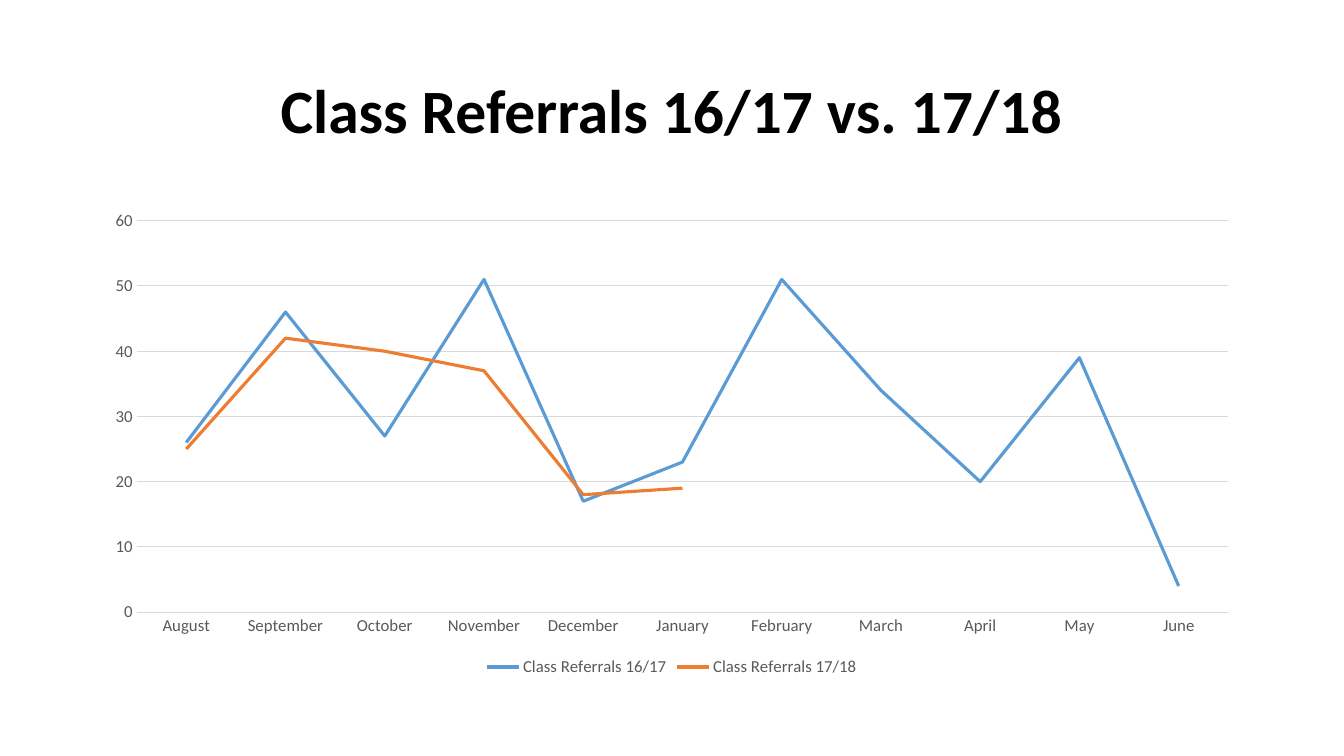
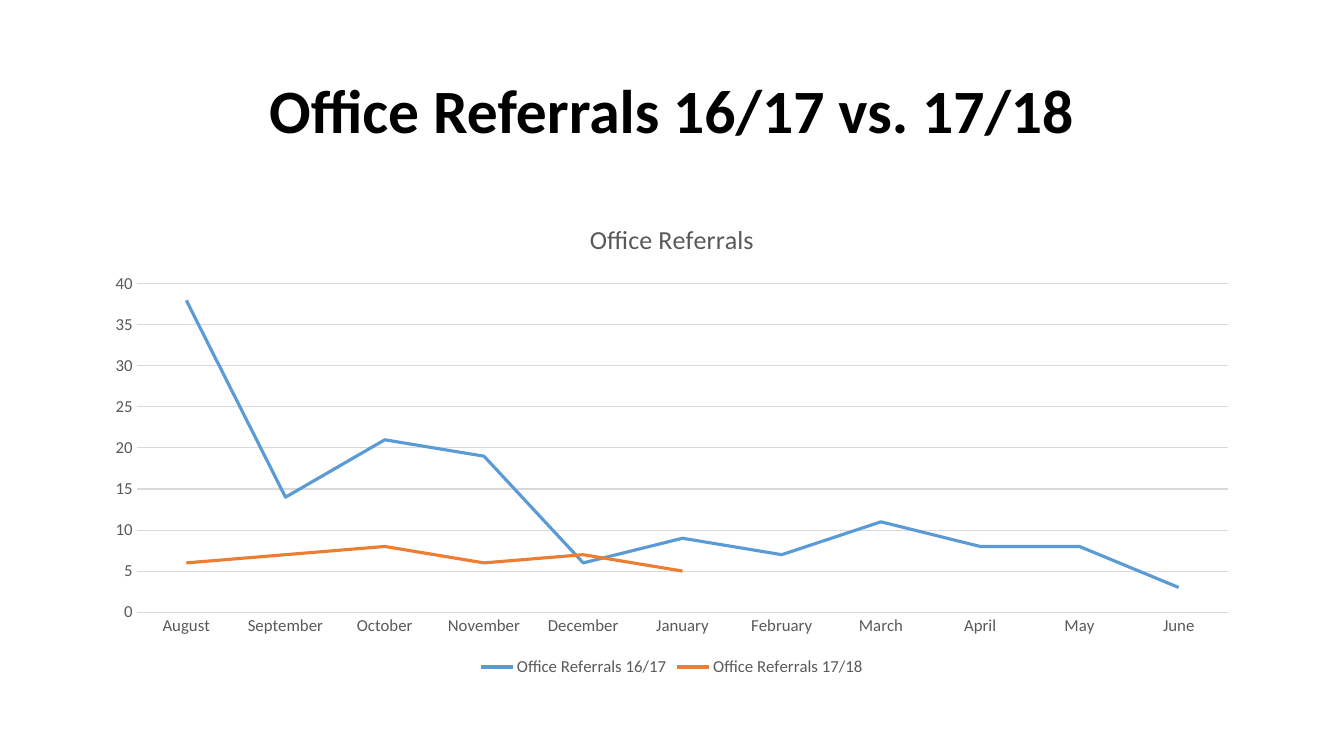
from pptx import Presentation
from pptx.chart.data import CategoryChartData
from pptx.dml.color import RGBColor
from pptx.enum.chart import XL_CHART_TYPE, XL_LEGEND_POSITION, XL_TICK_MARK
from pptx.enum.text import MSO_ANCHOR, PP_ALIGN
from pptx.util import Cm, Pt

FONT = "Calibri"
BLACK = RGBColor(0x00, 0x00, 0x00)
GRAY = RGBColor(0x59, 0x59, 0x59)
LIGHT_GRAY = RGBColor(0xD9, 0xD9, 0xD9)
BLUE = RGBColor(0x5B, 0x9B, 0xD5)
ORANGE = RGBColor(0xED, 0x7D, 0x31)

# Shared column for title and chart
LEFT, WIDTH = Cm(2.33), Cm(29.21)

MONTHS = ["August", "September", "October", "November", "December", "January",
          "February", "March", "April", "May", "June"]
CLASS_REFERRALS = {
    "16/17": [26, 46, 27, 51, 17, 23, 51, 34, 20, 39, 4],
    "17/18": [25, 42, 40, 37, 18, 19],
}
OFFICE_REFERRALS = {
    "16/17": [38, 14, 21, 19, 6, 9, 7, 11, 8, 8, 3],
    "17/18": [6, 7, 8, 6, 7, 5],
}


def format_font(font, size, color=GRAY, bold=False):
    font.name = FONT
    font.size = Pt(size)
    font.bold = bold
    font.color.rgb = color


def write_text(frame, text, align=PP_ALIGN.CENTER, line_spacing=None, **font_format):
    para = frame.paragraphs[0]
    para.alignment = align
    para.line_spacing = line_spacing
    span = para.add_run()
    span.text = text
    format_font(span.font, **font_format)


def add_title(page, text):
    box = page.shapes.add_textbox(LEFT, Cm(1.01), WIDTH, Cm(3.68))
    frame = box.text_frame
    frame.word_wrap = True
    frame.vertical_anchor = MSO_ANCHOR.MIDDLE
    write_text(frame, text, line_spacing=0.9, size=44, color=BLACK, bold=True)


def format_line(line, color, width):
    line.color.rgb = color
    line.width = Pt(width)


def format_axes(chart):
    for axis in (chart.category_axis, chart.value_axis):
        axis.major_tick_mark = XL_TICK_MARK.NONE
        axis.minor_tick_mark = XL_TICK_MARK.NONE
        format_font(axis.tick_labels.font, 12)
    format_line(chart.category_axis.format.line, LIGHT_GRAY, 0.75)
    chart.value_axis.format.line.fill.background()
    format_line(chart.value_axis.major_gridlines.format.line, LIGHT_GRAY, 0.75)


def add_line_chart(page, subject, values_by_year, top_value, step, title=None):
    data = CategoryChartData()
    data.categories = MONTHS
    for year, values in values_by_year.items():
        missing = [None] * (len(MONTHS) - len(values))
        data.add_series(f"{subject} {year}", values + missing)
    chart = page.shapes.add_chart(
        XL_CHART_TYPE.LINE, LEFT, Cm(5.07), WIDTH, Cm(12.09), data).chart
    format_font(chart.font, 10, BLACK)

    # Title and legend
    chart.has_title = title is not None
    if title:
        write_text(chart.chart_title.text_frame, title, size=18.6)
        chart.chart_title.include_in_layout = False
    chart.has_legend = True
    chart.legend.position = XL_LEGEND_POSITION.BOTTOM
    chart.legend.include_in_layout = False
    format_font(chart.legend.font, 12)

    # Axes and lines
    format_axes(chart)
    chart.value_axis.minimum_scale = 0
    chart.value_axis.maximum_scale = top_value
    chart.value_axis.major_unit = step
    chart.plots[0].vary_by_categories = False
    for series, color in zip(chart.plots[0].series, (BLUE, ORANGE)):
        series.smooth = False
        format_line(series.format.line, color, 2.25)


def add_comparison(deck, subject, values_by_year, **chart_format):
    page = deck.slides.add_slide(deck.slide_layouts[6])
    add_title(page, f"{subject} " + " vs. ".join(values_by_year))
    add_line_chart(page, subject, values_by_year, **chart_format)


def main():
    deck = Presentation()
    deck.slide_width, deck.slide_height = Cm(33.87), Cm(19.05)
    add_comparison(deck, "Class Referrals", CLASS_REFERRALS, top_value=60, step=10)
    add_comparison(deck, "Office Referrals", OFFICE_REFERRALS, top_value=40, step=5,
                   title="Office Referrals")
    deck.save("out.pptx")


if __name__ == "__main__":
    main()
